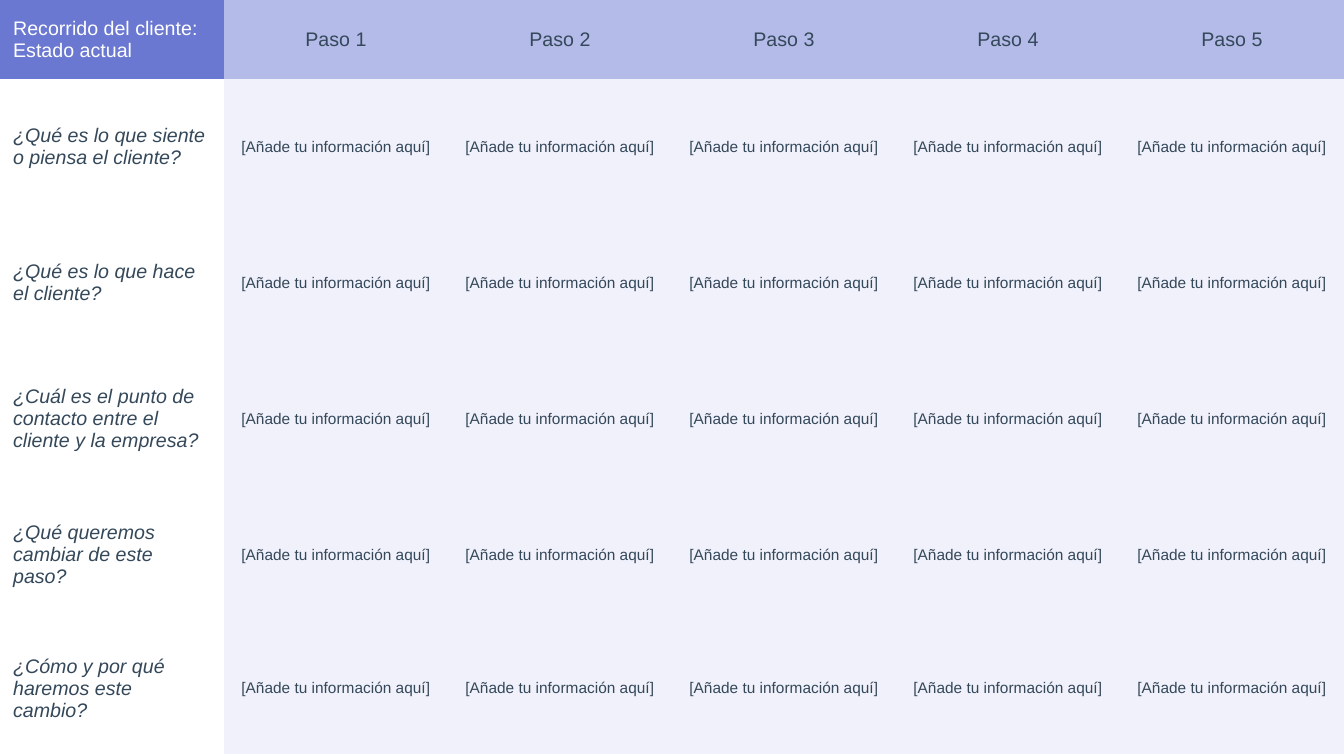
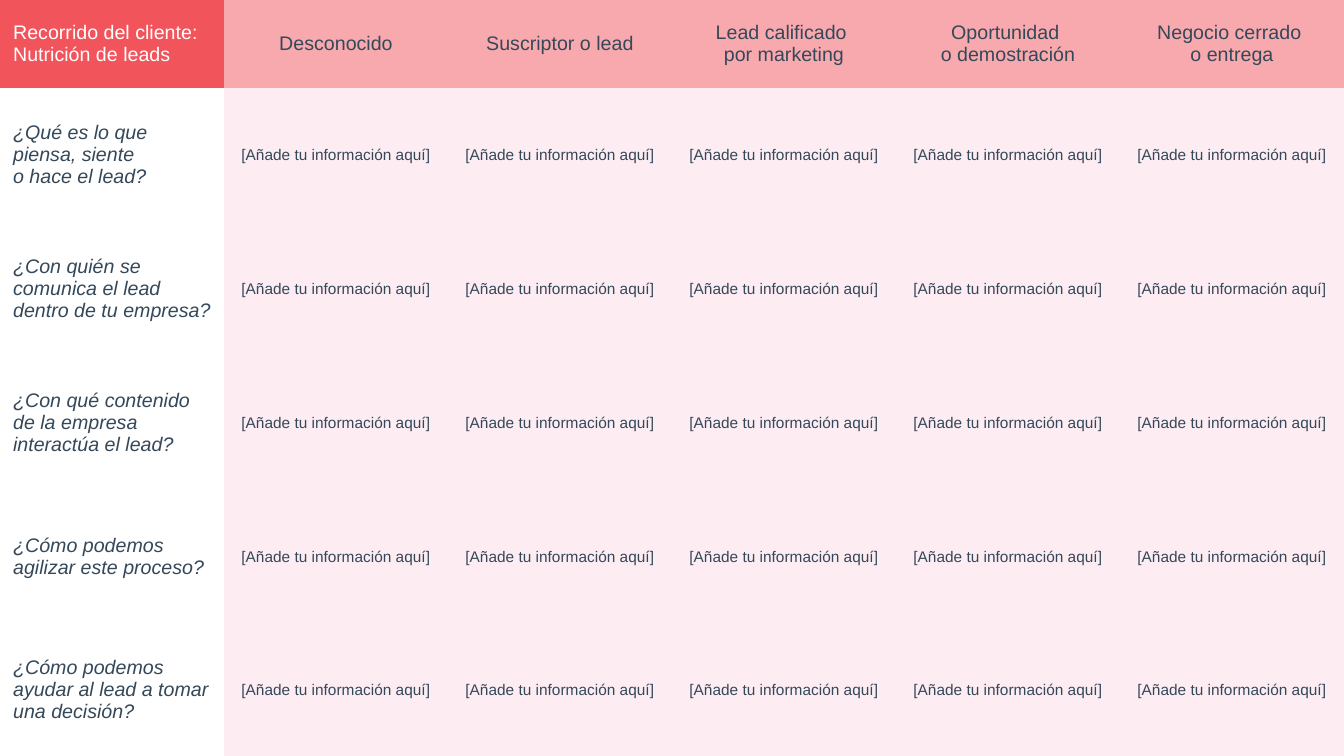
"""Build two customer journey grids, each a full-slide table."""
from pptx import Presentation
from pptx.dml.color import RGBColor
from pptx.enum.text import MSO_ANCHOR, PP_ALIGN
from pptx.oxml.ns import qn
from pptx.util import Inches, Pt

WIDTH, HEIGHT = 13.33, 7.5
COLUMNS = 6
MARGIN = 0.13
NO_STYLE_NO_GRID = "{2D5ABB26-0587-4C30-8999-92F81FD0307C}"
PROMPT = "[Añade tu información aquí]"
COLORS = {
    "white": "FFFFFF", "ink": "34485A",
    "indigo": "6A78D1", "indigo_mid": "B4BBE8", "indigo_pale": "F0F1FA",
    "red": "F2545B", "red_mid": "F8A9AD", "red_pale": "FDEDF2",
}
FORMATS = {
    "title": {"size": Pt(14), "italic": False, "color": "white", "align": PP_ALIGN.LEFT},
    "step": {"size": Pt(14), "italic": False, "color": "ink", "align": PP_ALIGN.CENTER},
    "question": {"size": Pt(14), "italic": True, "color": "ink", "align": PP_ALIGN.LEFT},
    "prompt": {"size": Pt(11), "italic": False, "color": "ink", "align": PP_ALIGN.CENTER},
}
JOURNEYS = [
    {
        "hue": "indigo",
        "title": "Recorrido del cliente: Estado actual",
        "steps": [f"Paso {number}" for number in range(1, COLUMNS)],
        "questions": [
            "¿Qué es lo que siente\no piensa el cliente?",
            "¿Qué es lo que hace el cliente?",
            "¿Cuál es el punto de contacto entre el cliente y la empresa?",
            "¿Qué queremos cambiar de este paso?",
            "¿Cómo y por qué haremos este cambio?",
        ],
        "heights": [0.78, 1.35, 1.35, 1.35, 1.35, 1.3],
    },
    {
        "hue": "red",
        "title": "Recorrido del cliente: Nutrición de leads",
        "steps": [
            "Desconocido",
            "Suscriptor o lead",
            "Lead calificado \npor marketing",
            "Oportunidad \no demostración",
            "Negocio cerrado \no entrega",
        ],
        "questions": [
            "¿Qué es lo que piensa, siente\no hace el lead?",
            "¿Con quién se comunica el lead dentro de tu empresa?",
            "¿Con qué contenido de la empresa interactúa el lead?",
            "¿Cómo podemos agilizar este proceso?",
            "¿Cómo podemos ayudar al lead a tomar una decisión?",
        ],
        "heights": [0.87, 1.33, 1.33, 1.33, 1.33, 1.31],
    },
]


def fill_cell(cell, text, kind, fill):
    cell.text = text
    cell.vertical_anchor = MSO_ANCHOR.MIDDLE
    for side in ("left", "right", "top", "bottom"):
        setattr(cell, f"margin_{side}", Inches(MARGIN))
    if fill:
        cell.fill.solid()
        cell.fill.fore_color.rgb = RGBColor.from_string(COLORS[fill])
    else:
        cell.fill.background()
    style = FORMATS[kind]
    for para in cell.text_frame.paragraphs:
        para.alignment = style["align"]
        for span in para.runs:
            span.font.name = "Arial"
            span.font.color.rgb = RGBColor.from_string(COLORS[style["color"]])
            for name in ("size", "italic"):
                setattr(span.font, name, style[name])


deck = Presentation()
deck.slide_width, deck.slide_height = Inches(WIDTH), Inches(HEIGHT)

for journey in JOURNEYS:
    page = deck.slides.add_slide(deck.slide_layouts[6])
    hue, heights = journey["hue"], journey["heights"]
    table = page.shapes.add_table(
        len(heights), COLUMNS, 0, 0, Inches(WIDTH), Inches(HEIGHT)
    ).table
    table.first_row = table.horz_banding = False
    table._tbl.tblPr.find(qn("a:tableStyleId")).text = NO_STYLE_NO_GRID
    for column in table.columns:
        column.width = Inches(WIDTH / COLUMNS)
    for row, height in zip(table.rows, heights):
        row.height = Inches(height)

    fill_cell(table.cell(0, 0), journey["title"], "title", hue)
    for column, step in enumerate(journey["steps"], 1):
        fill_cell(table.cell(0, column), step, "step", f"{hue}_mid")
    for row, question in enumerate(journey["questions"], 1):
        fill_cell(table.cell(row, 0), question, "question", None)
        for column in range(1, COLUMNS):
            fill_cell(table.cell(row, column), PROMPT, "prompt", f"{hue}_pale")

deck.save("out.pptx")
